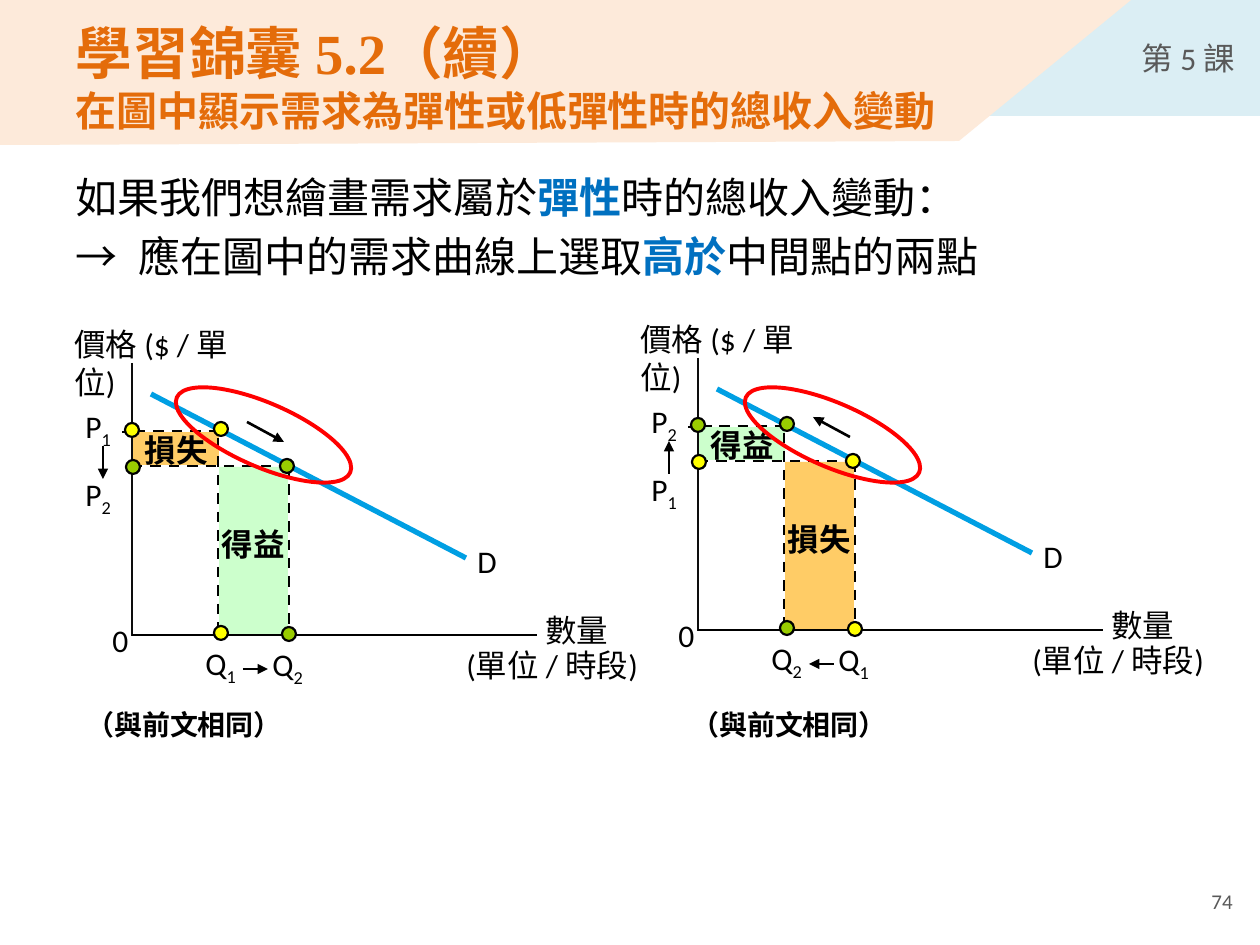
from lxml.etree import SubElement
from pptx import Presentation
from pptx.dml.color import RGBColor
from pptx.enum.dml import MSO_LINE
from pptx.enum.shapes import MSO_CONNECTOR, MSO_SHAPE
from pptx.enum.text import MSO_ANCHOR, MSO_AUTO_SIZE, PP_ALIGN
from pptx.oxml.ns import qn
from pptx.util import Pt

# Content
LESSON, PAGE = "第 5 課", "74"
TITLE = [("學習錦囊 5.2（續）", 32.4), ("在圖中顯示需求為彈性或低彈性時的總收入變動", 23.4)]
BODY = [
    ("如果我們想繪畫需求屬於", "彈性", "時的總收入變動："),
    ("→\t應在圖中的需求曲線上選取", "高於", "中間點的兩點"),
]
FOOTNOTE = "（與前文相同）"
BLACK, YELLOW, GREEN, GREY, BLUE = "000000", "FFFF00", "99CC00", "595959", "0070C0"
# subscript, dot colour, area label, area colour
LOSS_FIRST = ("1", YELLOW, "損失", "FFCC66"), ("2", GREEN, "得益", "CCFFCC")
GAIN_FIRST = ("2", GREEN, "得益", "CCFFCC"), ("1", YELLOW, "損失", "FFCC66")
# graph shift, higher and lower price, arrow end, highlight left, footnote left
GRAPHS = [
    ((0, 0), LOSS_FIRST, "tailEnd", 169, 74),
    ((566, -5), GAIN_FIRST, "headEnd", 738, 679),
]

# Graph parts in px, before the shift
AREAS = [(133, 432, 86, 33), (219, 467, 69, 168)]
AREA_LABELS = [(112, 425, 129, 50), (202, 519, 103, 50)]
AXIS_LABELS = [
    ("0", 100, 615, 73), ("數量", 533, 605, 95),
    ("價格 ($ / 單位)", 62, 319, 219), ("D", 465, 536, 62),
]
UNIT_LABEL = ("(單位 / 時段)", 447, 640, 227)
POINT_LABELS = [[("P", 73, 401), ("Q", 193, 638)], [("P", 73, 469), ("Q", 260, 639)]]
SOLID_LINES = [
    (151, 394, 466, 558, "009FE3", 3),
    (132, 363, 132, 636, "0D0D0D", 1.5),
    (132, 432, 122, 432, BLACK, 1),
    (537, 635, 132, 635, BLACK, 1.5),
]
DASHES = [(135, 431, 218, 431), (289, 466, 289, 643),
          (132, 466, 281, 466), (218, 438, 218, 631)]
ARROWS = [(243, 669, 268, 669), (103, 446, 103, 479), (247, 422, 284, 442)]
DOTS = [[(125, 423), (214, 422), (214, 626)], [(126, 460), (280, 459), (282, 627)]]
DOT = 14


def px(n):
    return round(n * 914400 / 126)


def rgb(color):
    return RGBColor.from_string(color)


def set_font(font, size, color=BLACK, bold=False, face="Calibri"):
    font.name, font.size, font.bold = face, Pt(size), bold
    font.color.rgb = rgb(color)


def add_text(shapes, text, x, y, w, h=50, size=18, color=BLACK, bold=False, align=None):
    frame = shapes.add_textbox(px(x), px(y), px(w), px(h)).text_frame
    frame.word_wrap = True
    para = frame.paragraphs[0]
    para.text = text
    para.alignment = align
    set_font(para.font, size, color, bold)
    return frame


def add_shape(shapes, kind, x, y, w, h, fill=None, line=None, width=1.25):
    shape = shapes.add_shape(kind, px(x), px(y), px(w), px(h))
    shape.shadow.inherit = False
    if fill:
        shape.fill.solid()
        shape.fill.fore_color.rgb = rgb(fill)
    else:
        shape.fill.background()
    if line:
        shape.line.color.rgb, shape.line.width = rgb(line), Pt(width)
    else:
        shape.line.fill.background()
    return shape


def add_line(shapes, x1, y1, x2, y2, color=BLACK, width=1.5, dash=None, arrow=None):
    line = shapes.add_connector(MSO_CONNECTOR.STRAIGHT, px(x1), px(y1), px(x2), px(y2))
    line.line.color.rgb, line.line.width = rgb(color), Pt(width)
    if dash:
        line.line.dash_style = dash
    if arrow:
        SubElement(line.line._get_or_add_ln(), qn("a:" + arrow), type="triangle")
    SubElement(line._element.spPr, qn("a:effectLst"))


def add_graph(shapes, dx, dy, prices, arrow):
    # Revenue areas
    for (x, y, w, h), (*_, fill) in zip(AREAS, prices):
        add_shape(shapes, MSO_SHAPE.RECTANGLE, x + dx, y + dy, w, h, fill)
    for (x, y, w, h), (_, _, label, _) in zip(AREA_LABELS, prices):
        add_text(shapes, label, x + dx, y + dy, w, h, bold=True, align=PP_ALIGN.CENTER)
    # Demand curve, axes and labels
    for x1, y1, x2, y2, color, width in SOLID_LINES:
        add_line(shapes, x1 + dx, y1 + dy, x2 + dx, y2 + dy, color, width)
    for text, x, y, w in AXIS_LABELS + [UNIT_LABEL]:
        frame = add_text(shapes, text, x + dx, y + dy, w)
    unit_format = frame.paragraphs[0]._p.get_or_add_pPr()
    unit_format.set("marL", str(px(12)))
    unit_format.set("indent", str(px(-5)))
    for labels, (subscript, *_) in zip(POINT_LABELS, prices):
        for letter, x, y in labels:
            para = add_text(shapes, letter, x + dx, y + dy, 77).paragraphs[0]
            index = para.add_run()
            index.text = subscript
            index.font._element.set("baseline", "-25000")
    # Guides, arrows and points
    for x1, y1, x2, y2 in DASHES:
        add_line(shapes, x1 + dx, y1 + dy, x2 + dx, y2 + dy, dash=MSO_LINE.DASH)
    for x1, y1, x2, y2 in ARROWS:
        add_line(shapes, x1 + dx, y1 + dy, x2 + dx, y2 + dy, arrow=arrow)
    for dots, (_, fill, *_) in zip(DOTS, prices):
        for x, y in dots:
            add_shape(shapes, MSO_SHAPE.OVAL, x + dx, y + dy, DOT, DOT, fill, BLACK)


def place(holder, x, y, w, h):
    holder.left, holder.top, holder.width, holder.height = map(px, (x, y, w, h))
    holder.text_frame.auto_size = MSO_AUTO_SIZE.NONE
    return holder.text_frame


prs = Presentation()
prs.slide_width, prs.slide_height = px(1260), px(945)
slide = prs.slides.add_slide(prs.slide_layouts[1])
shapes = slide.shapes
title, body = slide.placeholders

# Header bands, sent behind the title
lesson = add_shape(shapes, MSO_SHAPE.RECTANGLE, 927, 0, 333, 116, "DBEEF4")
lesson.text_frame.margin_right = px(25)
lesson_para = lesson.text_frame.paragraphs[0]
lesson_para.text, lesson_para.alignment = LESSON, PP_ALIGN.RIGHT
set_font(lesson_para.font, 18, GREY)
outline = shapes.build_freeform(0, 0, scale=px(1))
outline.add_line_segments([(1131, 0), (959, 141), (0, 145)])
band = outline.convert_to_shape()
band.shadow.inherit = False
band.fill.solid()
band.fill.fore_color.rgb = rgb("FDEADA")
band.line.fill.background()
for back in (lesson, band):
    title._element.addprevious(back._element)

# Title
title_frame = place(title, 63, 26, 895, 100)
title_frame.vertical_anchor = MSO_ANCHOR.MIDDLE
title_para = title_frame.paragraphs[0]
title_para.alignment = PP_ALIGN.LEFT
for i, (text, size) in enumerate(TITLE):
    if i:
        title_para.add_line_break()
    run = title_para.add_run()
    run.text = text
    set_font(run.font, size, "E46C0A", True, "Times New Roman")

# Body
body_frame = place(body, 63, 165, 1134, 125)
for i, parts in enumerate(BODY):
    para = body_frame.add_paragraph() if i else body_frame.paragraphs[0]
    para.space_before = Pt(4.8 if i else 0)
    para_format = para._p.get_or_add_pPr()
    para_format.set("marL", "0")
    para_format.set("indent", "0")
    SubElement(para_format, qn("a:buNone"))
    tabs = SubElement(para_format, qn("a:tabLst"))
    SubElement(tabs, qn("a:tab"), pos=str(px(126)), algn="l")
    for text, color, bold in zip(parts, (BLACK, BLUE, BLACK), (False, True, False)):
        run = para.add_run()
        run.text = text
        set_font(run.font, 24, color, bold, "Arial")

# Slide number
number = add_text(shapes, PAGE, 951, 876, 294, size=12, color=GREY, align=PP_ALIGN.RIGHT)
number.vertical_anchor = MSO_ANCHOR.MIDDLE

# Graphs, then their highlights and footnotes
for (dx, dy), prices, arrow, *_ in GRAPHS:
    add_graph(shapes.add_group_shape().shapes, dx, dy, prices, arrow)
for *_, highlight_x, note_x in GRAPHS:
    highlight = add_shape(shapes, MSO_SHAPE.OVAL, highlight_x, 403, 189, 64,
                          line="FF0000", width=2.25)
    highlight.rotation = 23.4
    add_text(shapes, FOOTNOTE, note_x, 701, 329, 47, size=16, bold=True)

prs.save("out.pptx")
